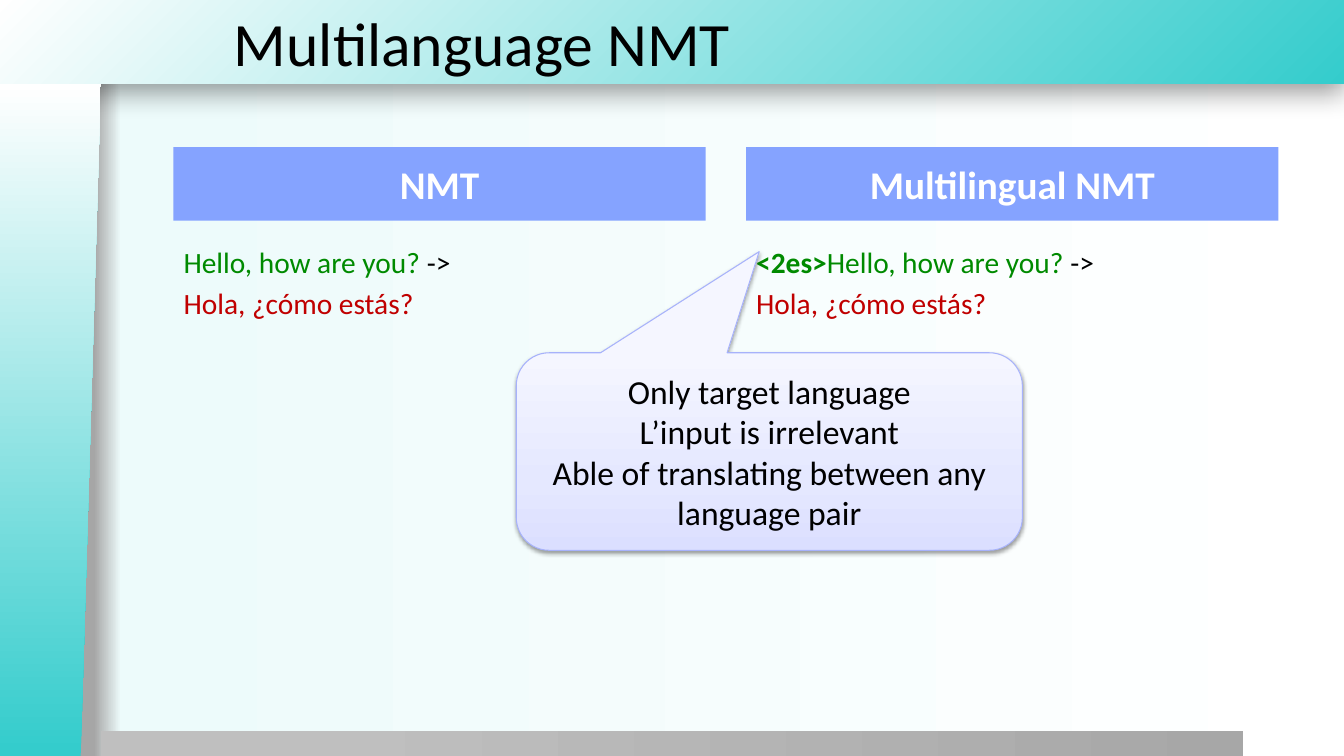
from lxml import etree
from pptx import Presentation
from pptx.dml.color import RGBColor
from pptx.enum.shapes import MSO_SHAPE
from pptx.enum.text import MSO_ANCHOR, MSO_AUTO_SIZE, PP_ALIGN
from pptx.oxml import parse_xml
from pptx.oxml.ns import nsdecls, qn
from pptx.util import Inches, Pt

CENTER, LEFT = PP_ALIGN.CENTER, PP_ALIGN.LEFT
TOP, MIDDLE = MSO_ANCHOR.TOP, MSO_ANCHOR.MIDDLE
NO_AUTOFIT = MSO_AUTO_SIZE.NONE
RECTANGLE = MSO_SHAPE.RECTANGLE
SLANTED_PANEL = MSO_SHAPE.FLOWCHART_MANUAL_INPUT
CALLOUT = MSO_SHAPE.ROUNDED_RECTANGULAR_CALLOUT

WIDTH, HEIGHT = 13.33, 7.5
HEADER_HEIGHT = 0.83
COLUMN_LEFT, COLUMN_STEP, COLUMN_WIDTH = 1.72, 5.68, 5.28
BLACK, WHITE, TEAL = "000000", "FFFFFF", "34CCCC"
GREEN, RED, BLUE = "008A00", "C00000", "85A3FF"

GREETING = ("Hello, how are you?", {"color": GREEN})
ARROW = (" ->", {"color": BLACK})
ANSWER = [("Hola, ¿cómo estás?", {"color": RED})]
TAG = ("<2es>", {"color": GREEN, "bold": True})
COLUMNS = [
    ("NMT", [[GREETING, ARROW], ANSWER], 4.78),
    ("Multilingual NMT", [[TAG, GREETING, ARROW], ANSWER], 1.13),
]
CALLOUT_LINES = [
    "Only target language",
    "L’input is irrelevant",
    "Able of translating between any language pair",
]


def rgb(value):
    return RGBColor.from_string(value)


def set_gradient(owner, fill, stops, direction):
    """Give owner a gradient; stops are (percent, colour) pairs."""
    fill.solid()
    solid = owner.element.find(".//" + qn("a:solidFill"))
    stop_xml = "".join(
        f'<a:gs pos="{percent * 1000}"><a:srgbClr val="{color}"/></a:gs>'
        for percent, color in stops)
    gradient = parse_xml(
        f'<a:gradFill {nsdecls("a")} rotWithShape="1">'
        f"<a:gsLst>{stop_xml}</a:gsLst>{direction}</a:gradFill>")
    solid.getparent().replace(solid, gradient)


def linear(degrees):
    return f'<a:lin ang="{degrees * 60000}" scaled="0"/>'


def set_shadow(shape, opacity, blur, distance):
    shape.shadow.inherit = False
    effects = shape.element.spPr.find(qn("a:effectLst"))
    shadow = etree.SubElement(
        effects, qn("a:outerShdw"), blurRad=str(Pt(blur)),
        dist=str(Pt(distance)), dir="5400000", rotWithShape="0")
    color = etree.SubElement(shadow, qn("a:srgbClr"), val=BLACK)
    etree.SubElement(color, qn("a:alpha"), val=str(opacity * 1000))


def place(shape, box):
    for name, value in zip(("left", "top", "width", "height"), box):
        setattr(shape, name, Inches(value))


def write(shape, paragraphs, size, align=LEFT, anchor=MIDDLE):
    """Fill shape with paragraphs, each a list of (text, format) runs."""
    frame = shape.text_frame
    settings = {"word_wrap": True, "auto_size": NO_AUTOFIT,
                "vertical_anchor": anchor}
    for name, value in settings.items():
        setattr(frame, name, value)
    for index, runs in enumerate(paragraphs):
        paragraph = frame.add_paragraph() if index else frame.paragraphs[0]
        paragraph.alignment = align
        for text, style in runs:
            run = paragraph.add_run()
            run.text = text
            font_format = {"name": "Calibri", "size": Pt(size),
                           "bold": style.get("bold", False)}
            for name, value in font_format.items():
                setattr(run.font, name, value)
            run.font.color.rgb = rgb(style["color"])


def remove_bullets(shape):
    for paragraph in shape.text_frame.paragraphs:
        properties = paragraph._p.get_or_add_pPr()
        properties.set("marL", "0")
        properties.set("indent", "0")
        etree.SubElement(properties, qn("a:buNone"))


def add_gradient_shape(slide, kind, box, stops, direction):
    shape = slide.shapes.add_shape(kind, *map(Inches, box))
    shape.shadow.inherit = False
    set_gradient(shape, shape.fill, stops, direction)
    shape.line.fill.background()
    return shape


def add_backdrop(slide):
    set_gradient(slide, slide.background.fill,
                 [(7, "A6A6A6"), (9, "EDFBFB"), (100, WHITE)], linear(0))
    from_corner = ('<a:path path="circle">'
                   '<a:fillToRect l="100000" t="100000"/></a:path>')
    header = add_gradient_shape(
        slide, RECTANGLE, (0, 0, WIDTH, HEADER_HEIGHT),
        [(0, TEAL), (100, WHITE)], from_corner)
    set_shadow(header, 40, 20, 6)
    add_gradient_shape(slide, RECTANGLE, (1, 7.25, 11.33, 0.26),
                       [(20, "BFBFBF"), (100, "A7A7A7")], linear(0))
    length = HEIGHT - HEADER_HEIGHT
    middle = (HEIGHT + HEADER_HEIGHT) / 2
    panel = add_gradient_shape(
        slide, SLANTED_PANEL, (0.5 - length / 2, middle - 0.5, length, 1),
        [(1, TEAL), (100, WHITE)], linear(0))
    panel.rotation = 270
    panel.element.spPr.find(qn("a:xfrm")).set("flipV", "1")


def bring_to_front(slide, placeholders):
    for placeholder in placeholders:
        slide.shapes._spTree.append(placeholder.element)


def fill_title(title):
    place(title, (2.22, 0, WIDTH - 2.22, HEADER_HEIGHT))
    write(title, [[("Multilanguage NMT", {"color": BLACK})]], 44)


def fill_column(heading, body, left, column):
    name, paragraphs, body_height = column
    place(heading, (left, 1.46, COLUMN_WIDTH, 0.73))
    heading.fill.solid()
    heading.fill.fore_color.rgb = rgb(BLUE)
    write(heading, [[(name, {"color": WHITE, "bold": True})]], 28, CENTER)
    place(body, (left, 2.37, COLUMN_WIDTH, body_height))
    write(body, paragraphs, 21, anchor=TOP)
    remove_bullets(body)


def add_callout(slide, box):
    callout = add_gradient_shape(
        slide, CALLOUT, box,
        [(0, "DBDFFF"), (35, "E5E8FF"), (100, "F5F6FF")], linear(270))
    for index, value in enumerate((-0.02, -1.012, 0.167)):
        callout.adjustments[index] = value
    callout.line.color.rgb = rgb("A7B2FB")
    callout.line.width = Pt(0.75)
    set_shadow(callout, 38, 3.1, 1.6)
    write(callout, [[(line, {"color": BLACK})] for line in CALLOUT_LINES],
          24, CENTER)


def main():
    presentation = Presentation()
    presentation.slide_width = Inches(WIDTH)
    presentation.slide_height = Inches(HEIGHT)
    slide = presentation.slides.add_slide(presentation.slide_layouts[4])
    for placeholder in list(slide.placeholders)[5:]:
        placeholder.element.getparent().remove(placeholder.element)
    title, *parts = slide.placeholders
    add_backdrop(slide)
    bring_to_front(slide, [title, *parts])
    fill_title(title)
    for index, column in enumerate(COLUMNS):
        heading, body = parts[2 * index:2 * index + 2]
        fill_column(heading, body, COLUMN_LEFT + index * COLUMN_STEP, column)
    add_callout(slide, (5.12, 3.5, 5.02, 1.96))
    presentation.save("out.pptx")


if __name__ == "__main__":
    main()
